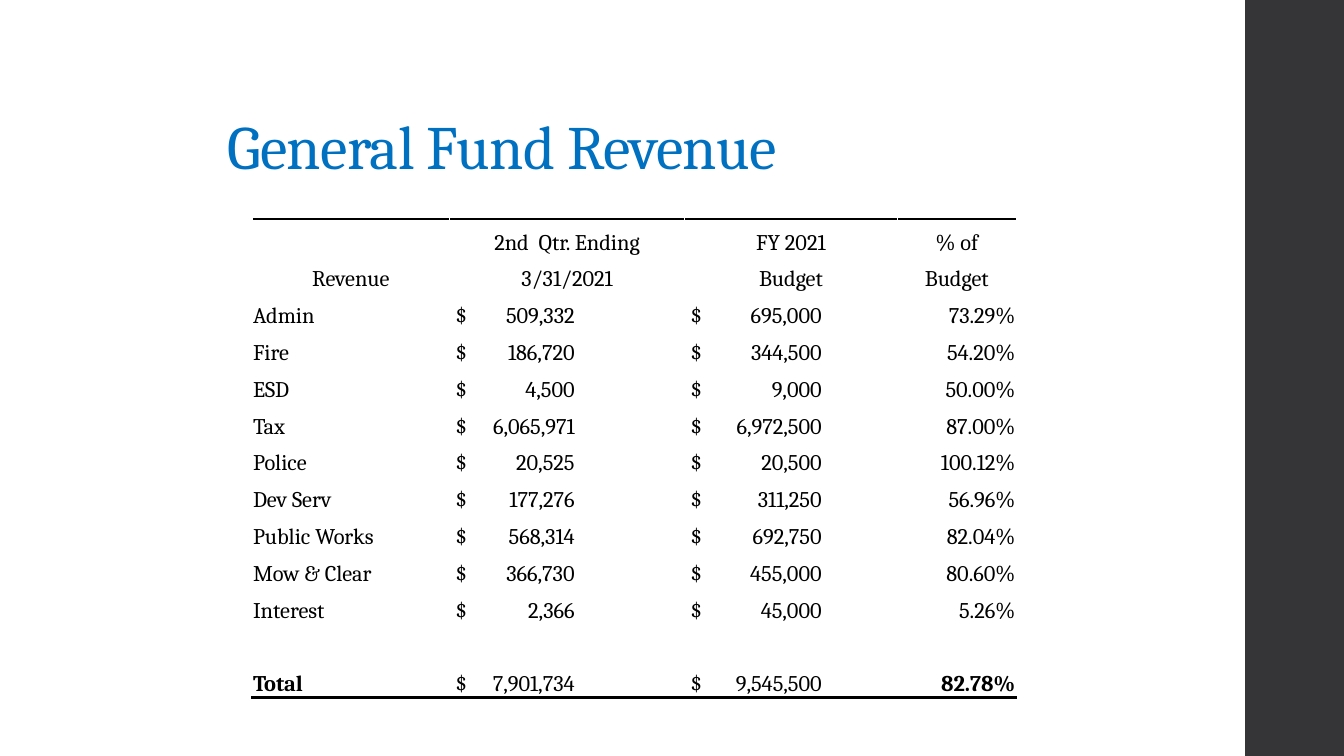
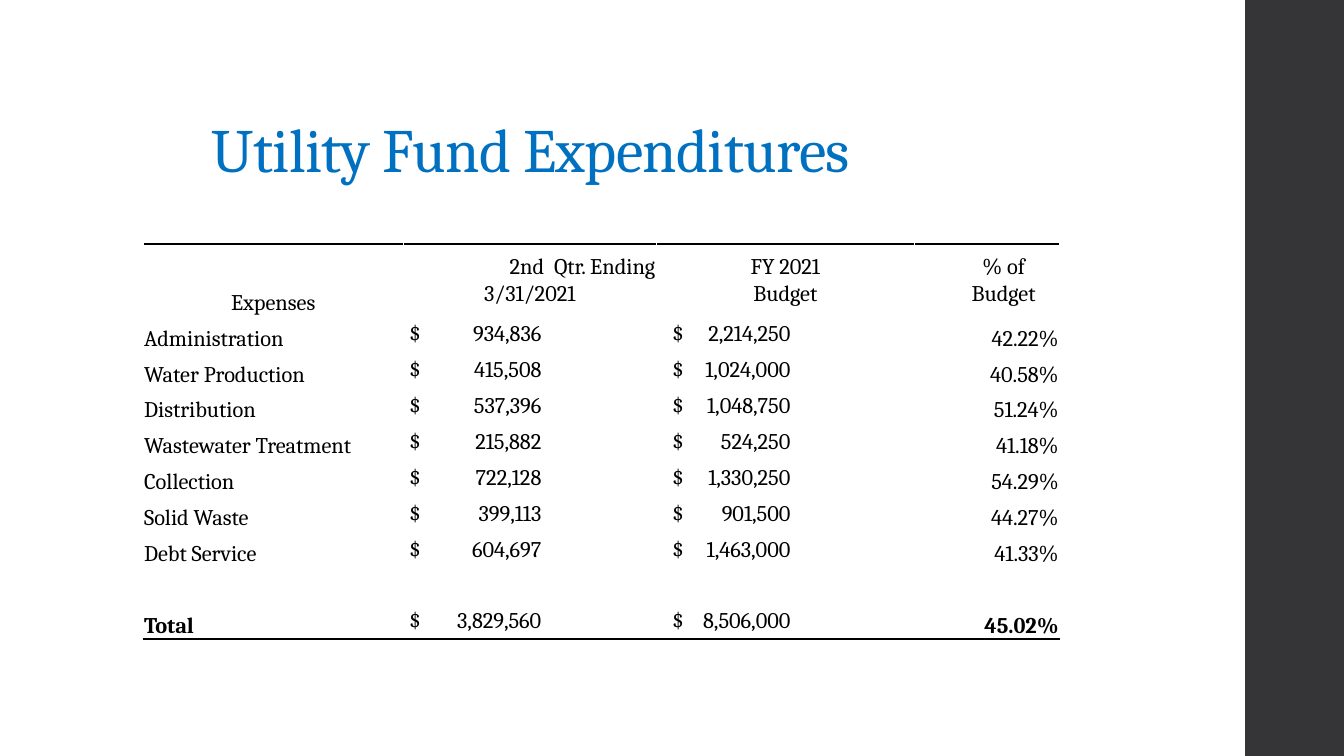
import lxml.etree
import pptx
import pptx.dml.color
import pptx.enum.shapes
import pptx.enum.text
import pptx.oxml
import pptx.oxml.ns
import pptx.util

Inches = pptx.util.Inches
Pt = pptx.util.Pt
RGBColor = pptx.dml.color.RGBColor
Align = pptx.enum.text.PP_ALIGN
Anchor = pptx.enum.text.MSO_ANCHOR
qn = pptx.oxml.ns.qn

TITLE_BLUE = RGBColor(0x00, 0x70, 0xC0)
BAND_GREY = RGBColor(0x35, 0x35, 0x37)
BLACK = RGBColor(0x00, 0x00, 0x00)
WHITE = RGBColor(0xFF, 0xFF, 0xFF)
FONT = "Cambria"
TITLE_ONLY = 5

REVENUE = [
    ("Admin", 509332, 695000),
    ("Fire", 186720, 344500),
    ("ESD", 4500, 9000),
    ("Tax", 6065971, 6972500),
    ("Police", 20525, 20500),
    ("Dev Serv", 177276, 311250),
    ("Public Works", 568314, 692750),
    ("Mow & Clear", 366730, 455000),
    ("Interest", 2366, 45000),
]
EXPENSES = [
    ("Administration", 934836, 2214250),
    ("Water Production", 415508, 1024000),
    ("Distribution", 537396, 1048750),
    ("Wastewater Treatment", 215882, 524250),
    ("Collection", 722128, 1330250),
    ("Solid Waste", 399113, 901500),
    ("Debt Service", 604697, 1463000),
]


class FundDeck:
    def __init__(self):
        self.deck = pptx.Presentation()
        self.deck.slide_width = Inches(13.33)
        self.deck.slide_height = Inches(7.5)
        self.slide = None

    def add_slide(self, title, left, top, width, height):
        self.slide = self.deck.slides.add_slide(self.deck.slide_layouts[TITLE_ONLY])
        self.side_band()
        self.title(title, left, top, width, height)

    def side_band(self):
        band = self.slide.shapes.add_shape(
            pptx.enum.shapes.MSO_SHAPE.RECTANGLE,
            Inches(12.35), 0, Inches(0.98), self.deck.slide_height)
        band.shadow.inherit = False
        band.fill.solid()
        band.fill.fore_color.rgb = BAND_GREY
        band.line.fill.background()

    def title(self, text, left, top, width, height):
        heading = self.slide.shapes.title
        heading.left, heading.top = Inches(left), Inches(top)
        heading.width, heading.height = Inches(width), Inches(height)
        frame = heading.text_frame
        frame.auto_size = pptx.enum.text.MSO_AUTO_SIZE.NONE
        frame.vertical_anchor = Anchor.BOTTOM
        paragraph = frame.paragraphs[0]
        paragraph.alignment = Align.LEFT
        paragraph.line_spacing = 0.9
        run = self.add_run(paragraph, text, 44, TITLE_BLUE)
        run.font._element.set("spc", "-50")

    def add_run(self, paragraph, text, size, color, bold=False):
        run = paragraph.add_run()
        run.text = text
        run.font.name = FONT
        run.font.size = Pt(size)
        run.font.color.rgb = color
        run.font.bold = bold
        return run

    def cell_text(self, cell, text, align=Align.LEFT, anchor=Anchor.BOTTOM,
                  bold=False, indent=0.01):
        cell.vertical_anchor = anchor
        cell.margin_left = Inches(indent)
        paragraph = cell.text_frame.paragraphs[0]
        paragraph.alignment = align
        self.add_run(paragraph, text, 16, BLACK, bold)

    def money(self, cell, amount, indent, tab, anchor):
        self.cell_text(cell, f"$\t{amount:,}", anchor=anchor, indent=indent)
        properties = cell.text_frame.paragraphs[0]._p.get_or_add_pPr()
        tabs = lxml.etree.SubElement(properties, qn("a:tabLst"))
        lxml.etree.SubElement(tabs, qn("a:tab"), pos=str(Inches(tab)), algn="r")

    def rule(self, cell, side):
        border = pptx.oxml.parse_xml(
            f'<a:{side} xmlns:a="http://schemas.openxmlformats.org/drawingml/2006/main" '
            f'w="{Pt(2)}"><a:solidFill><a:srgbClr val="{BLACK}"/></a:solidFill></a:{side}>')
        cell._tc.get_or_add_tcPr().insert(0, border)

    def blank_table(self, left, top, height, widths, row_count):
        table = self.slide.shapes.add_table(
            row_count, len(widths), Inches(left), Inches(top),
            Inches(sum(widths)), Inches(height)).table
        table.first_row = table.horz_banding = False
        for column, width in zip(table.columns, widths):
            column.width = Inches(width)
        for cell in table.iter_cells():
            cell.fill.solid()
            cell.fill.fore_color.rgb = WHITE
            cell.margin_left = cell.margin_right = cell.margin_top = Inches(0.01)
            cell.margin_bottom = 0
        for column in range(len(widths)):
            self.rule(table.cell(0, column), "lnT")
            self.rule(table.cell(row_count - 1, column), "lnB")
        return table

    def fund_table(self, label, entries, left, top, height, widths, money_stops,
                   money_anchor=Anchor.BOTTOM, quarter_align=Align.CENTER,
                   subhead_anchor=Anchor.BOTTOM, share_indent=0.01):
        total_row = len(entries) + 3
        table = self.blank_table(left, top, height, widths, total_row + 1)
        heads = [("2nd  Qtr. Ending", "3/31/2021", quarter_align, 0.01),
                 ("FY 2021", "Budget", Align.CENTER, 0.01),
                 ("% of", "Budget", Align.CENTER, share_indent)]
        self.cell_text(table.cell(1, 0), label, Align.CENTER)
        for column, (upper, lower, align, indent) in enumerate(heads, 1):
            self.cell_text(table.cell(0, column), upper, align, indent=indent)
            self.cell_text(table.cell(1, column), lower, Align.CENTER,
                           subhead_anchor, indent=indent)
        total = ("Total", sum(entry[1] for entry in entries),
                 sum(entry[2] for entry in entries))
        for row, (name, actual, budget) in [*enumerate(entries, 2), (total_row, total)]:
            bold = row == total_row
            self.cell_text(table.cell(row, 0), name, bold=bold)
            for column, amount in enumerate((actual, budget), 1):
                indent, tab = money_stops[column - 1]
                self.money(table.cell(row, column), amount, indent, tab, money_anchor)
            self.cell_text(table.cell(row, 3), f"{actual / budget:.2%}",
                           Align.RIGHT, bold=bold)

    def save(self):
        self.deck.save("out.pptx")


def main():
    deck = FundDeck()
    deck.add_slide("General Fund Revenue", 2.16, 0.83, 7.95, 1.03)
    deck.fund_table("Revenue", REVENUE, 2.5, 2.17, 4.75, (1.96, 2.33, 2.11, 1.18),
                    money_stops=((0.06, 1.18), (0.06, 1.3)))
    deck.add_slide("Utility Fund Expenditures", 2, 0.44, 8.37, 1.45)
    deck.fund_table("Expenses", EXPENSES, 1.42, 2.42, 3.92, (2.58, 2.51, 2.56, 1.44),
                    money_stops=((0.06, 1.31), (0.16, 1.17)),
                    money_anchor=Anchor.MIDDLE, quarter_align=Align.RIGHT,
                    subhead_anchor=Anchor.TOP, share_indent=0.34)
    deck.save()


if __name__ == "__main__":
    main()
